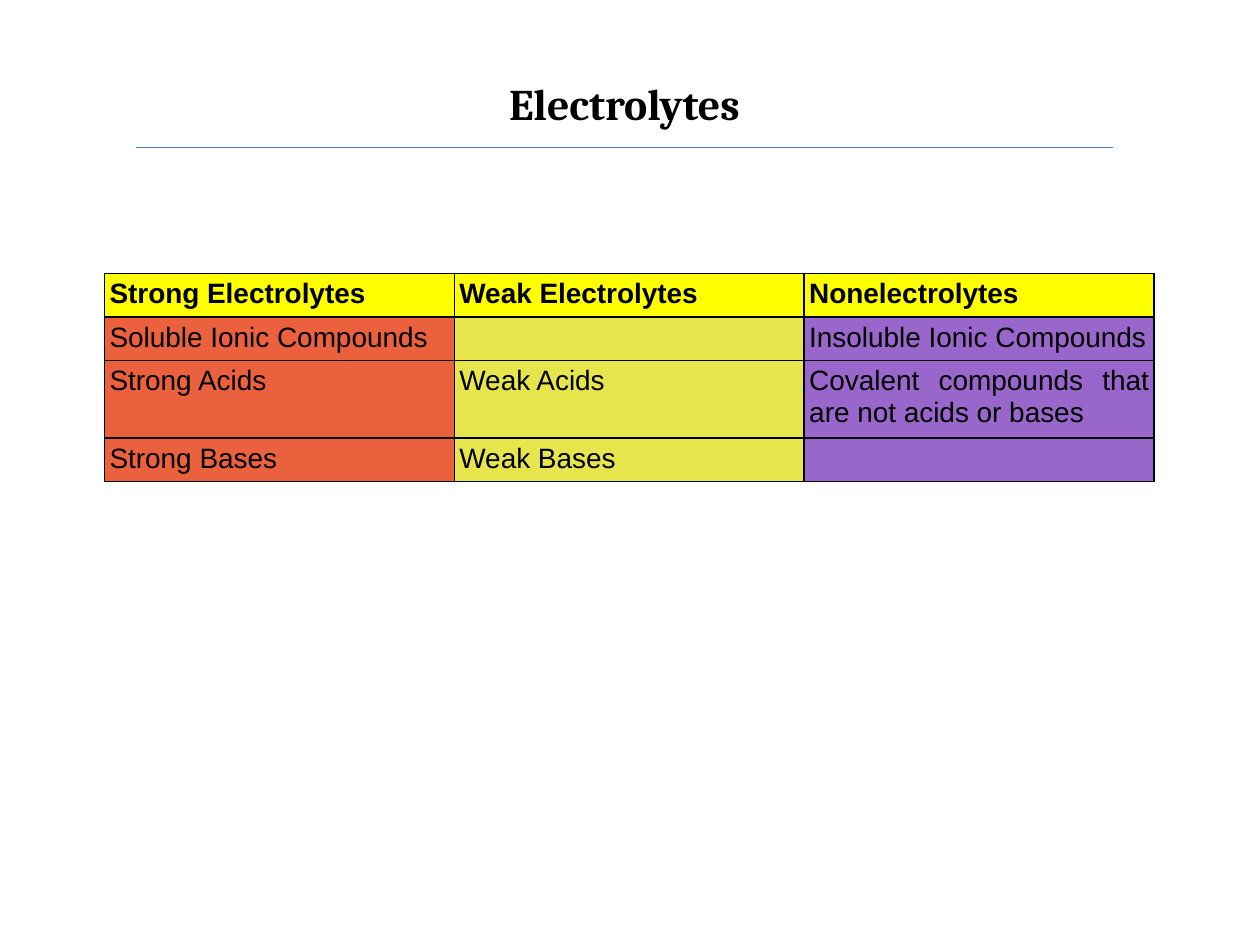
from lxml.etree import SubElement
from pptx import Presentation
from pptx.dml.color import RGBColor
from pptx.enum.shapes import MSO_CONNECTOR
from pptx.enum.text import MSO_ANCHOR, PP_ALIGN
from pptx.oxml.ns import qn
from pptx.util import Inches, Pt

BLACK = RGBColor(0x00, 0x00, 0x00)
BLUE = RGBColor(0x4B, 0x7E, 0xBC)
YELLOW = RGBColor(0xFF, 0xFF, 0x00)
COLUMN_FILLS = [
    RGBColor(0xEB, 0x61, 0x3D),
    RGBColor(0xE6, 0xE6, 0x4C),
    RGBColor(0x99, 0x66, 0xCC),
]
ROWS = [
    ["Strong Electrolytes", "Weak Electrolytes", "Nonelectrolytes"],
    ["Soluble Ionic Compounds", "", "Insoluble Ionic Compounds"],
    ["Strong Acids", "Weak Acids", "Covalent compounds that are not acids or bases"],
    ["Strong Bases", "Weak Bases", ""],
]
ROW_HEIGHTS = [0.34, 0.34, 0.61, 0.34]
TITLE_FONT = {"name": "Cambria", "size": Pt(25), "bold": True}
HEADER_FONT = {"name": "Arial", "size": Pt(16), "bold": True}
BODY_FONT = {**HEADER_FONT, "bold": False}
CELL_FORMAT = {
    "margin_left": Inches(0.04),
    "margin_right": Inches(0.04),
    "margin_top": Inches(0.04),
    "margin_bottom": Inches(0.04),
    "vertical_anchor": MSO_ANCHOR.TOP,
}


def set_attrs(obj, values):
    """Set each named attribute of an object."""
    for name, value in values.items():
        setattr(obj, name, value)


def write(p, text, font, align):
    """Put one formatted run in a paragraph, or size the paragraph if empty."""
    p.alignment = align
    if not text:
        p._p.get_or_add_endParaRPr().set("sz", str(int(font["size"].pt * 100)))
        return
    r = p.add_run()
    r.text = text
    set_attrs(r.font, font)
    r.font.color.rgb = BLACK


def add_borders(cell, color, width):
    """Draw a solid line on all four sides of a cell."""
    tc_pr = cell._tc.get_or_add_tcPr()
    for side in ("a:lnL", "a:lnR", "a:lnT", "a:lnB"):
        ln = SubElement(tc_pr, qn(side), w=str(width))
        fill = SubElement(ln, qn("a:solidFill"))
        SubElement(fill, qn("a:srgbClr"), val=str(color))


def add_title(s, text, left, top, width, height):
    """Place the centred title with a rule below it."""
    sp = s.shapes.add_textbox(left, top, width, height)
    tf = sp.text_frame
    tf.word_wrap = True
    write(tf.paragraphs[0], text, TITLE_FONT, PP_ALIGN.CENTER)
    y = top + Inches(0.61)
    rule = s.shapes.add_connector(MSO_CONNECTOR.STRAIGHT, left, y, left + width, y)
    rule.line.color.rgb = BLUE
    rule.line.width = Pt(0.75)
    SubElement(rule._element.spPr, qn("a:effectLst"))


def add_electrolyte_table(s, left, top, width):
    """Place the table of electrolyte classes in equal columns."""
    height = Inches(sum(ROW_HEIGHTS))
    sp = s.shapes.add_table(len(ROWS), len(COLUMN_FILLS), left, top, width, height)
    table = sp.table
    set_attrs(table, {"first_row": False, "horz_banding": False})
    for row, row_height in zip(table.rows, ROW_HEIGHTS):
        row.height = Inches(row_height)
    for i, texts in enumerate(ROWS):
        for j, text in enumerate(texts):
            cell = table.cell(i, j)
            set_attrs(cell, CELL_FORMAT)
            add_borders(cell, BLACK, Pt(1))
            cell.fill.solid()
            cell.fill.fore_color.rgb = COLUMN_FILLS[j] if i else YELLOW
            font = BODY_FONT if i else HEADER_FONT
            write(cell.text_frame.paragraphs[0], text, font, PP_ALIGN.JUSTIFY)


def main():
    """Build the slide and save it."""
    prs = Presentation()
    prs.slide_width, prs.slide_height = Inches(10), Inches(7.5)
    s = prs.slides.add_slide(prs.slide_layouts[6])
    add_title(s, "Electrolytes", Inches(1.08), Inches(0.56), Inches(7.75), Inches(0.52))
    add_electrolyte_table(s, Inches(0.83), Inches(2.17), Inches(8.33))
    prs.save("out.pptx")


if __name__ == "__main__":
    main()
